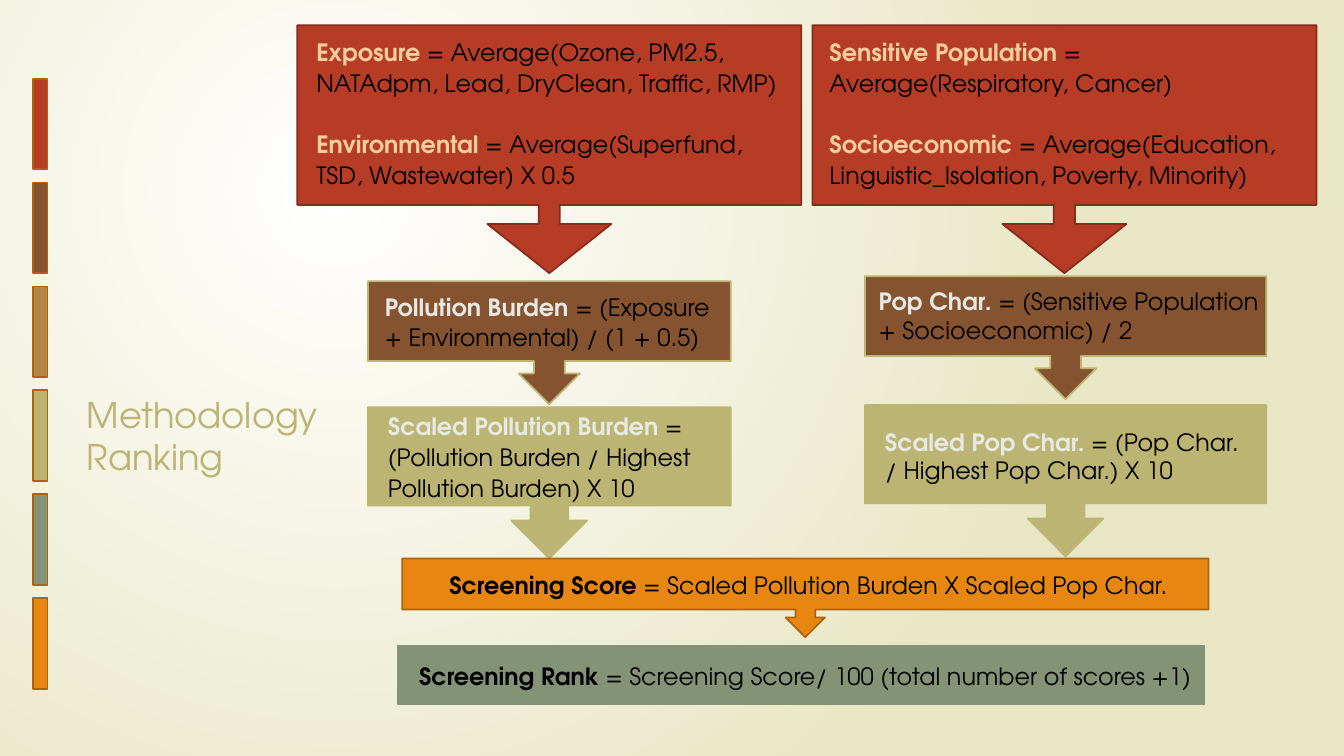
from dataclasses import dataclass

import pptx
import pptx.dml.color
import pptx.enum.shapes
import pptx.enum.text
import pptx.oxml
import pptx.oxml.ns
import pptx.presentation
import pptx.shapes.autoshape
import pptx.slide
import pptx.util
from pptx.util import Pt

Box = tuple[float, float, float, float]  # left, top, width, height in points
SHAPE = pptx.enum.shapes.MSO_SHAPE


@dataclass(frozen=True)
class Theme:
    font: str = "TeX Gyre Adventor"
    title_size: float = 25.2
    body_size: float = 17
    line_width: float = 1.25
    red: str = "B73C26"
    dark_red: str = "872C1C"
    brown: str = "865331"
    tan: str = "B38648"
    olive: str = "BBB473"
    sage: str = "849276"
    orange: str = "E78712"
    dark_orange: str = "AB640D"
    peach: str = "F7CF9E"
    pale: str = "E6E9E4"
    black: str = "000000"
    white: str = "FFFFFF"
    cream: str = "E8E6C4"


THEME = Theme()


@dataclass(frozen=True)
class Formula:
    term: str
    definition: str


@dataclass(frozen=True)
class Step:
    box: Box
    fill: str
    line: str
    text_box: Box
    term_color: str
    formulas: tuple[Formula, ...]
    preset: SHAPE = SHAPE.DOWN_ARROW_CALLOUT
    adjustments: tuple[float, ...] = ()
    line_spacing: float = 1.07


WIDE_ARROW = (0.085, 0.25, 0.198, 0.725)

STEPS = (
    Step((212.4, 18, 360, 177.1), THEME.red, THEME.dark_red,
         (218.9, 22.3, 347.8, 117.4), THEME.peach,
         (Formula("Exposure ", "= Average(Ozone, PM2.5, NATAdpm, Lead, DryClean, Traffic, RMP)"),
          Formula("Environmental ", "= Average(Superfund, TSD, Wastewater) X 0.5")),
         adjustments=WIDE_ARROW),
    Step((580.3, 18, 360, 177.1), THEME.red, THEME.dark_red,
         (585.4, 22.3, 358.6, 117.4), THEME.peach,
         (Formula("Sensitive Population ", "= Average(Respiratory, Cancer)"),
          Formula("Socioeconomic ",
                  "= Average(Education, Linguistic_Isolation, Poverty, Minority)")),
         adjustments=WIDE_ARROW),
    Step((262.8, 200.9, 259.2, 87.8), THEME.brown, THEME.olive,
         (267.8, 203.8, 259.2, 51.1), THEME.pale,
         (Formula("Pollution Burden ", "= (Exposure + Environmental) / (1 + 0.5)"),)),
    Step((617.8, 197.3, 286.6, 87.8), THEME.brown, THEME.olive,
         (620.6, 201.6, 286.6, 48.2), THEME.pale,
         (Formula("Pop Char. ", "= (Sensitive Population + Socioeconomic) / 2"),),
         line_spacing=1.0),
    Step((262.8, 290.9, 259.2, 108), THEME.olive, THEME.olive,
         (270, 289.4, 259.2, 73.4), THEME.pale,
         (Formula("Scaled Pollution Burden ",
                  "= (Pollution Burden / Highest Pollution Burden) X 10"),)),
    Step((617.8, 289.4, 286.6, 108), THEME.olive, THEME.olive,
         (625, 301.7, 269.3, 48.2), THEME.pale,
         (Formula("Scaled Pop Char. ", "= (Pop Char. / Highest Pop Char.) X 10"),),
         line_spacing=1.0),
    Step((287.3, 398.9, 576, 56.2), THEME.orange, THEME.dark_orange,
         (313.9, 403.9, 583.2, 28.1), THEME.black,
         (Formula("Screening Score", " = Scaled Pollution Burden X Scaled Pop Char."),),
         line_spacing=1.0),
    Step((284.4, 461.5, 576, 41.8), THEME.sage, THEME.sage,
         (292.3, 468, 576, 29.5), THEME.black,
         (Formula("Screening Rank", " = Screening Score/ 100 (total number of scores +1)"),),
         preset=SHAPE.RECTANGLE),
)

BAR_COLORS = (THEME.red, THEME.brown, THEME.tan, THEME.olive, THEME.sage, THEME.orange)
BAR_TOP, BAR_PITCH = 56.2, 74.2
FORMULA_GAP = 21.8


def rgb(color: str) -> pptx.dml.color.RGBColor:
    return pptx.dml.color.RGBColor.from_string(color)


def in_points(box: Box) -> list[pptx.util.Length]:
    return [Pt(length) for length in box]


def paint_background(slide: pptx.slide.Slide) -> None:
    """Fill the background with a circular gradient centred towards the upper left."""
    fill = slide.background.fill
    fill.gradient()
    for stop, position, color in zip(fill.gradient_stops, (0, 1), (THEME.white, THEME.cream)):
        stop.position = position
        stop.color.rgb = rgb(color)
    linear = slide.background._cSld.find(".//" + pptx.oxml.ns.qn("a:lin"))
    circle = pptx.oxml.parse_xml(
        f'<a:path {pptx.oxml.ns.nsdecls("a")} path="circle">'
        '<a:fillToRect l="50000" t="50000" r="100000" b="100000"/></a:path>'
    )
    linear.getparent().replace(linear, circle)


def add_title(slide: pptx.slide.Slide, text: str, box: Box) -> None:
    title = slide.shapes.title
    title.left, title.top, title.width, title.height = in_points(box)
    frame = title.text_frame
    frame.text = text
    frame.word_wrap = True
    frame.auto_size = pptx.enum.text.MSO_AUTO_SIZE.NONE
    frame.vertical_anchor = pptx.enum.text.MSO_ANCHOR.BOTTOM
    paragraph = frame.paragraphs[0]
    paragraph.alignment = pptx.enum.text.PP_ALIGN.LEFT
    paragraph.line_spacing = 1.0
    paragraph.font.name = THEME.font
    paragraph.font.size = Pt(THEME.title_size)
    paragraph.font.color.rgb = rgb(THEME.olive)


def add_filled_shape(
    slide: pptx.slide.Slide, preset: SHAPE, box: Box, fill: str, line: str
) -> pptx.shapes.autoshape.Shape:
    shape = slide.shapes.add_shape(preset, *in_points(box))
    shape.shadow.inherit = False
    shape.fill.solid()
    shape.fill.fore_color.rgb = rgb(fill)
    shape.line.color.rgb = rgb(line)
    shape.line.width = Pt(THEME.line_width)
    return shape


def add_formulas(slide: pptx.slide.Slide, step: Step) -> None:
    frame = slide.shapes.add_textbox(*in_points(step.text_box)).text_frame
    frame.word_wrap = True
    frame.auto_size = pptx.enum.text.MSO_AUTO_SIZE.SHAPE_TO_FIT_TEXT
    for index, formula in enumerate(step.formulas):
        paragraph = frame.add_paragraph() if index else frame.paragraphs[0]
        paragraph.space_before = Pt(FORMULA_GAP if index else 0)
        paragraph.line_spacing = step.line_spacing
        paragraph.font.name = THEME.font
        paragraph.font.size = Pt(THEME.body_size)
        term = paragraph.add_run()
        term.text = formula.term
        term.font.bold = True
        term.font.color.rgb = rgb(step.term_color)
        definition = paragraph.add_run()
        definition.text = formula.definition
        definition.font.color.rgb = rgb(THEME.black)


def add_step(slide: pptx.slide.Slide, step: Step) -> None:
    shape = add_filled_shape(slide, step.preset, step.box, step.fill, step.line)
    for index, value in enumerate(step.adjustments):
        shape.adjustments[index] = value
    add_formulas(slide, step)


def main() -> None:
    presentation = pptx.Presentation()
    presentation.slide_width, presentation.slide_height = Pt(960), Pt(540)
    slide = presentation.slides.add_slide(presentation.slide_layouts[5])
    paint_background(slide)
    add_title(slide, "Methodology\vRanking", (54.7, 284.4, 200.2, 60.5))
    for index, color in enumerate(BAR_COLORS):
        bar_box = (23.8, BAR_TOP + index * BAR_PITCH, 10.1, 64.8)
        add_filled_shape(slide, SHAPE.RECTANGLE, bar_box, color, THEME.dark_orange)
    for step in STEPS:
        add_step(slide, step)
    presentation.save("out.pptx")


if __name__ == "__main__":
    main()
